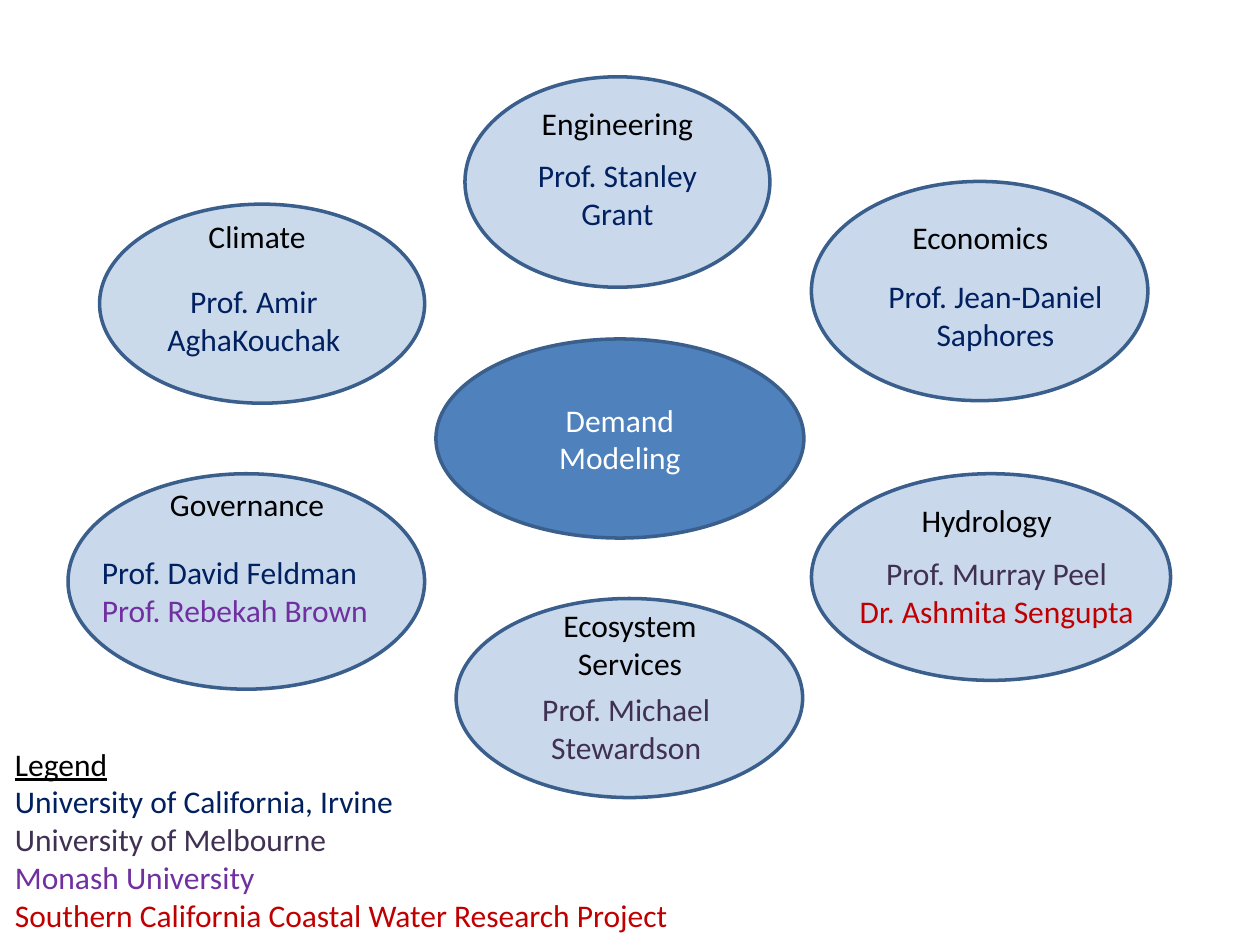
import pptx
import pptx.util
from pptx.dml.color import RGBColor
from pptx.enum.shapes import MSO_SHAPE
from pptx.enum.text import MSO_ANCHOR, MSO_AUTO_SIZE, PP_ALIGN
from lxml import etree

BLUE = RGBColor(0x4F, 0x81, 0xBD)
OUTLINE = RGBColor(0x3A, 0x5F, 0x8C)
WHITE = RGBColor(0xFF, 0xFF, 0xFF)
BLACK = RGBColor(0x00, 0x00, 0x00)
IRVINE = RGBColor(0x00, 0x20, 0x60)
MELBOURNE = RGBColor(0x40, 0x31, 0x52)
MONASH = RGBColor(0x70, 0x30, 0xA0)
COASTAL = RGBColor(0xC0, 0x00, 0x00)

prs = pptx.Presentation()
prs.slide_width = pptx.util.Inches(10)
prs.slide_height = pptx.util.Inches(7.5)
s = prs.slides.add_slide(prs.slide_layouts[6])

# Grid of 100 columns by 75 rows
COL = prs.slide_width / 100
ROW = prs.slide_height / 75


def add_ellipse(x, y, w, h, opacity=100):
    sp = s.shapes.add_shape(MSO_SHAPE.OVAL, int(x * COL), int(y * ROW), int(w * COL), int(h * ROW))
    sp.shadow.inherit = False
    sp.fill.solid()
    sp.fill.fore_color.rgb = BLUE
    sp.line.color.rgb = OUTLINE
    sp.line.width = pptx.util.Pt(2)
    if opacity < 100:
        color = sp.fill._xPr.solidFill[0]
        etree.SubElement(color, pptx.oxml.ns.qn("a:alpha"), val=str(opacity * 1000))
    return sp


def write(tf, lines, align):
    tf.word_wrap = True
    tf.text = "\n".join(text for text, color in lines)
    for p, (text, color) in zip(tf.paragraphs, lines):
        p.alignment = align
        r = p.runs[0]
        r.font.name = "Calibri"
        r.font.size = pptx.util.Pt(18)
        r.font.color.rgb = color


# Central topic
center = add_ellipse(34.6, 26.9, 29.2, 15.8)
center.text_frame.vertical_anchor = MSO_ANCHOR.MIDDLE
write(center.text_frame, [("Demand Modeling", WHITE)], PP_ALIGN.CENTER)

# Discipline ellipses
for x, y, w, h, opacity in [
    (7.9, 16.2, 25.8, 15.8, 29),
    (5.4, 37.6, 28.3, 17.1, 30),
    (36.2, 47.5, 27.5, 15.8, 30),
    (36.9, 6.1, 24.2, 16.7, 30),
    (64.4, 14.4, 26.7, 17.4, 30),
    (64.4, 37.6, 28.5, 16.4, 30),
]:
    add_ellipse(x, y, w, h, opacity)

# Discipline names, people and legend
C, L = PP_ALIGN.CENTER, PP_ALIGN.LEFT
for x, y, w, h, align, lines in [
    (39.4, 7.8, 19.2, 4.2, C, [("Engineering", BLACK)]),
    (68.2, 16.8, 19.2, 4.2, C, [("Economics", BLACK)]),
    (68.7, 39.3, 19.2, 4.2, C, [("Hydrology", BLACK)]),
    (10.8, 16.7, 19.2, 4.2, C, [("Climate", BLACK)]),
    (10, 38, 19.2, 4.2, C, [("Governance", BLACK)]),
    (40.4, 47.6, 19.2, 7.1, C, [("Ecosystem Services", BLACK)]),
    (39.4, 11.9, 19.2, 7.1, C, [("Prof. Stanley Grant", IRVINE)]),
    (8.7, 21.9, 22.9, 7.1, C, [("Prof. Amir AghaKouchak", IRVINE)]),
    (66.4, 43.5, 25.4, 10.1, C, [("Prof. Murray Peel", MELBOURNE), ("Dr. Ashmita Sengupta", COASTAL)]),
    (37.6, 54.3, 24.2, 7.1, C, [("Prof. Michael Stewardson", MELBOURNE)]),
    (66.9, 21.5, 24.2, 7.1, C, [("Prof. Jean-Daniel Saphores", IRVINE)]),
    (7.1, 43.4, 25.8, 7.1, L, [("Prof. David Feldman", IRVINE), ("Prof. Rebekah Brown", MONASH)]),
    (0.2, 58.6, 61.9, 16.2, L, [
        ("Legend", BLACK),
        ("University of California, Irvine", IRVINE),
        ("University of Melbourne", MELBOURNE),
        ("Monash University", MONASH),
        ("Southern California Coastal Water Research Project", COASTAL),
    ]),
]:
    box = s.shapes.add_textbox(int(x * COL), int(y * ROW), int(w * COL), int(h * ROW))
    tf = box.text_frame
    write(tf, lines, align)
    tf.auto_size = MSO_AUTO_SIZE.SHAPE_TO_FIT_TEXT

# The legend is the last box; underline its heading
tf.paragraphs[0].runs[0].font.underline = True

prs.save("out.pptx")
